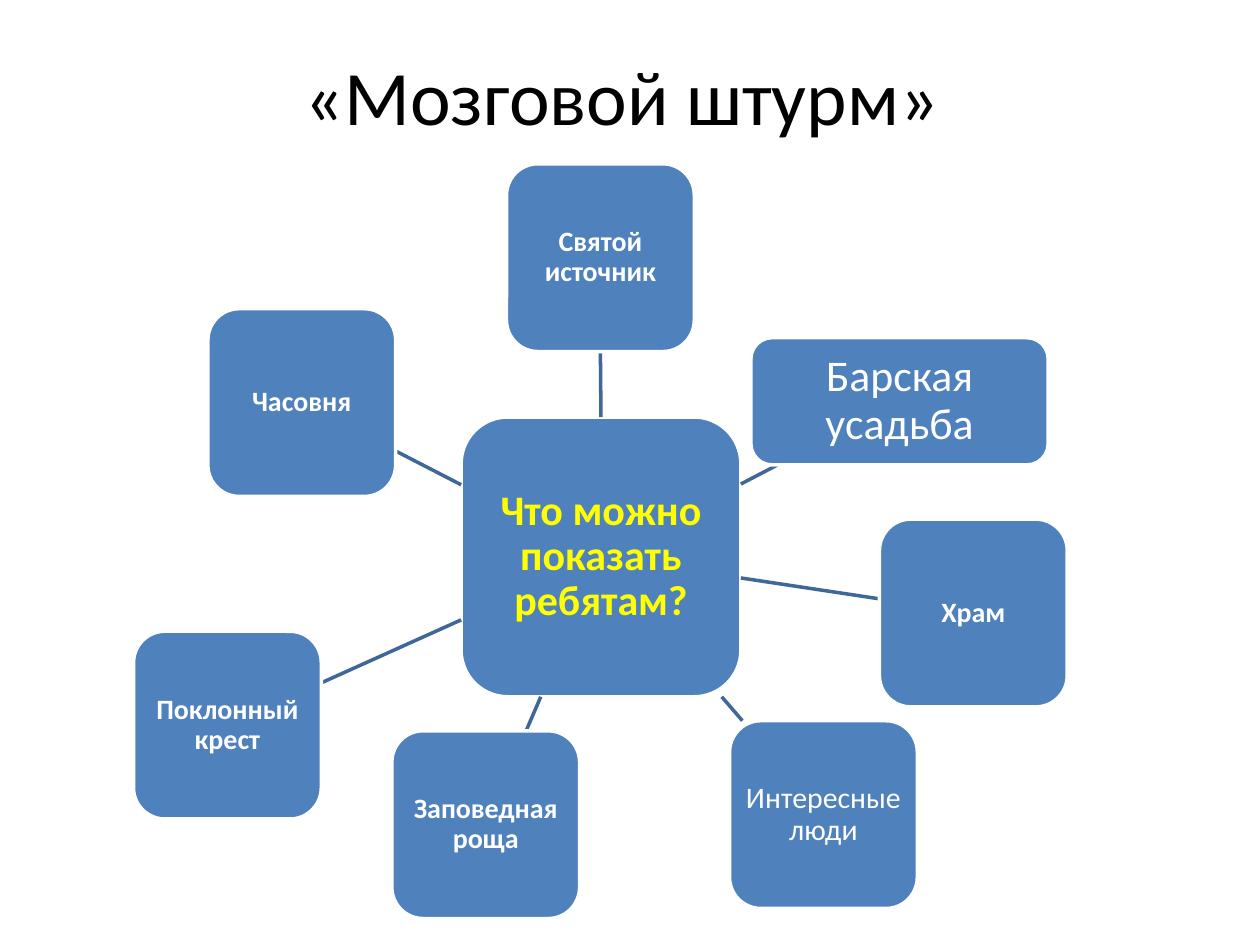
from pptx import Presentation
from pptx.dml.color import RGBColor
from pptx.enum.shapes import MSO_CONNECTOR as Conn, MSO_SHAPE as Shape
from pptx.enum.text import MSO_ANCHOR as Anchor, PP_ALIGN as Align
from pptx.oxml.ns import qn
from pptx.util import Inches, Pt
from lxml.etree import SubElement

HUB = (3.66, 3.31, 2.22, 2.22)
SIDE = 1.49


def color(code):
    return RGBColor.from_string(code)


def write(shape, text, size, fill="FFFFFF", bold=False, font="Calibri",
          space=1.0, insets=(0.04,) * 4):
    frame = shape.text_frame
    frame.word_wrap = True
    frame.vertical_anchor = Anchor.MIDDLE
    (frame.margin_left, frame.margin_top,
     frame.margin_right, frame.margin_bottom) = map(Inches, insets)
    para = frame.paragraphs[0]
    para.alignment = Align.CENTER
    para.line_spacing = space
    run = para.add_run()
    run.text = text
    run.font.name = font
    run.font.size = Pt(size)
    run.font.bold = bold
    run.font.color.rgb = color(fill)


def center(box):
    left, top, width, height = box
    return left + width / 2, top + height / 2


def edge(box, goal):
    """Point where the ray from the box's center to goal leaves the box."""
    x, y = center(box)
    dx, dy = goal[0] - x, goal[1] - y
    scale = 1 / max(abs(dx) / (box[2] / 2), abs(dy) / (box[3] / 2))
    return x + dx * scale, y + dy * scale


class Board:
    fill, rim, link = "4F81BD", "FFFFFF", "3F6797"
    weight = Pt(2)

    def __init__(self, slide):
        self.shapes = slide.shapes

    def title(self, text):
        box = self.shapes.add_textbox(*map(Inches, (0.51, 0.29, 9, 1.25)))
        write(box, text, 44, fill="000000", insets=(0.1, 0.05, 0.24, 0.37))

    def node(self, text, box, size=16, bold=True, **style):
        shape = self.shapes.add_shape(Shape.ROUNDED_RECTANGLE, *map(Inches, box))
        shape.shadow.inherit = False
        shape.fill.solid()
        shape.fill.fore_color.rgb = color(self.fill)
        shape.line.color.rgb = color(self.rim)
        shape.line.width = self.weight
        write(shape, text, size, bold=bold, space=0.9, **style)
        return shape

    def line(self, start, end):
        line = self.shapes.add_connector(Conn.STRAIGHT, *map(Inches, start + end))
        line.line.color.rgb = color(self.link)
        line.line.width = self.weight
        SubElement(line._element.spPr, qn("a:effectLst"))
        return line


def main():
    deck = Presentation()
    deck.slide_width, deck.slide_height = Inches(10), Inches(7.5)
    board = Board(deck.slides.add_slide(deck.slide_layouts[6]))
    board.title("«Мозговой штурм»")

    wide = (0.07,) * 4
    hub = board.node("Что можно показать ребятам?", HUB, size=24,
                     fill="FFFF00", insets=wide)
    ideas = [
        ("Святой источник", (4.02, 1.3, SIDE, SIDE), {}),
        ("Барская усадьба", (5.96, 2.68, 2.36, 1.01),
         dict(size=25, bold=False, insets=wide)),
        ("Храм", (6.98, 4.12, SIDE, SIDE), {}),
        ("Интересные люди", (5.79, 5.72, SIDE, SIDE),
         dict(size=17, bold=False)),
        ("Заповедная роща", (3.11, 5.8, SIDE, SIDE), {}),
        ("Поклонный крест", (1.06, 5.01, SIDE, SIDE), {}),
        ("Часовня", (1.65, 2.45, SIDE, SIDE), {}),
    ]
    for text, box, style in ideas:
        line = board.line(edge(HUB, center(box)), edge(box, center(HUB)))
        node = board.node(text, box, **style)
        if abs(center(box)[0] - center(HUB)[0]) < 0.01:
            line.begin_connect(hub, 0)
            line.end_connect(node, 2)

    deck.save("out.pptx")


if __name__ == "__main__":
    main()
